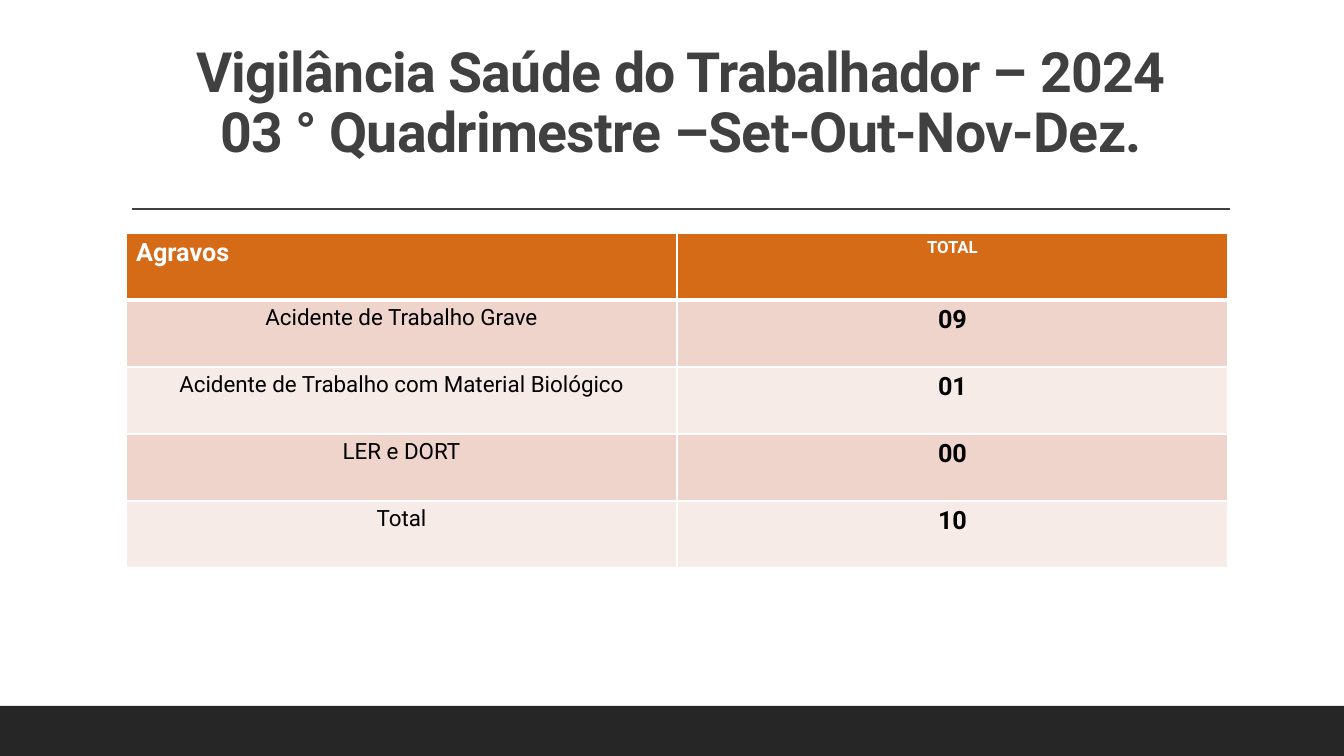
from dataclasses import dataclass

from pptx import Presentation
from pptx.dml.color import RGBColor
from pptx.enum.shapes import MSO_CONNECTOR as CONN, MSO_SHAPE as SHAPE
from pptx.enum.text import MSO_ANCHOR as ANCHOR, PP_ALIGN as ALIGN
from pptx.oxml import parse_xml
from pptx.oxml.ns import nsdecls, qn
from pptx.util import Emu, Pt


@dataclass(frozen=True)
class Theme:
    font: str = "Roboto"
    ink: str = "404040"
    footer: str = "262626"
    header: str = "D56A17"
    bands: tuple = ("EFD4CC", "F7EBE8")
    white: str = "FFFFFF"
    black: str = "000000"
    title_size: float = 39.6
    value_size: int = 18
    label_size: int = 16
    total_size: int = 12


def px(n):
    return Emu(round(n * 12192000 / 1344))


def rgb(color):
    return RGBColor.from_string(color)


class Deck:
    def __init__(self, theme):
        self.theme = theme
        self.prs = Presentation()
        self.prs.slide_width, self.prs.slide_height = px(1344), px(756)
        self.s = self.prs.slides.add_slide(self.prs.slide_layouts[6])

    def style(self, p, size, color, bold, align):
        p.alignment = align
        f = p.font
        f.name, f.size, f.bold = self.theme.font, Pt(size), bold
        f.color.rgb = rgb(color)

    def bar(self, x, y, w, h, color):
        sp = self.s.shapes.add_shape(SHAPE.RECTANGLE, px(x), px(y), px(w), px(h))
        sp.shadow.inherit = False
        sp.fill.solid()
        sp.fill.fore_color.rgb = rgb(color)
        sp.line.fill.background()

    def rule(self, x1, x2, y, color):
        line = self.s.shapes.add_connector(CONN.STRAIGHT, px(x1), px(y), px(x2), px(y))
        line.line.color.rgb = rgb(color)
        line.line.width = Pt(1)
        line._element.spPr.append(parse_xml(f"<a:effectLst {nsdecls('a')}/>"))

    def title(self, x, y, w, h, lines):
        tf = self.s.shapes.add_textbox(px(x), px(y), px(w), px(h)).text_frame
        tf.word_wrap = True
        tf.vertical_anchor = ANCHOR.BOTTOM
        p = tf.paragraphs[0]
        p.text = "\v".join(lines)
        p.line_spacing = 0.9
        self.style(p, self.theme.title_size, self.theme.ink, True, ALIGN.CENTER)
        p._p.pPr.find(qn("a:defRPr")).set("spc", "-50")

    def borders(self, cell, bottom):
        """Draw white cell borders, with the bottom width in points."""
        tcPr = cell._tc.get_or_add_tcPr()
        for side, width in (("L", 1), ("R", 1), ("T", 1), ("B", bottom)):
            tcPr.append(parse_xml(
                f'<a:ln{side} {nsdecls("a")} w="{Pt(width)}"><a:solidFill>'
                f'<a:srgbClr val="{self.theme.white}"/></a:solidFill></a:ln{side}>'))

    def cell(self, cell, text, fill, size, color, bold, align, bottom=1):
        self.borders(cell, bottom)
        cell.fill.solid()
        cell.fill.fore_color.rgb = rgb(fill)
        cell.text = text
        self.style(cell.text_frame.paragraphs[0], size, color, bold, align)

    def table(self, x, y, col_w, row_h, header, rows):
        t = self.theme
        table = self.s.shapes.add_table(
            len(rows) + 1, 2, px(x), px(y), px(2 * col_w), px(row_h * (len(rows) + 1))).table
        for col in table.columns:
            col.width = px(col_w)
        for row in table.rows:
            row.height = px(row_h)
        head = zip(header, (t.value_size, t.total_size), (ALIGN.LEFT, ALIGN.CENTER))
        for c, (text, size, align) in enumerate(head):
            self.cell(table.cell(0, c), text, t.header, size, t.white, True, align, 3)
        for r, (label, value) in enumerate(rows, 1):
            fill = t.bands[(r - 1) % 2]
            self.cell(table.cell(r, 0), label, fill, t.label_size, t.black, False, ALIGN.CENTER)
            self.cell(table.cell(r, 1), value, fill, t.value_size, t.black, True, ALIGN.CENTER)


def main():
    theme = Theme()
    deck = Deck(theme)
    deck.bar(0, 706, 1344, 50, theme.footer)
    deck.rule(132, 1230, 209, theme.ink)
    deck.title(78, 31, 1206, 138, [
        "Vigilância Saúde do Trabalhador – 2024",
        "03 ° Quadrimestre –Set-Out-Nov-Dez.",
    ])
    deck.table(126, 233, 551, 67, ("Agravos", "TOTAL"), [
        ("Acidente de Trabalho Grave", "09"),
        ("Acidente de Trabalho com Material Biológico", "01"),
        ("LER e DORT", "00"),
        ("Total", "10"),
    ])
    deck.prs.save("out.pptx")


if __name__ == "__main__":
    main()
